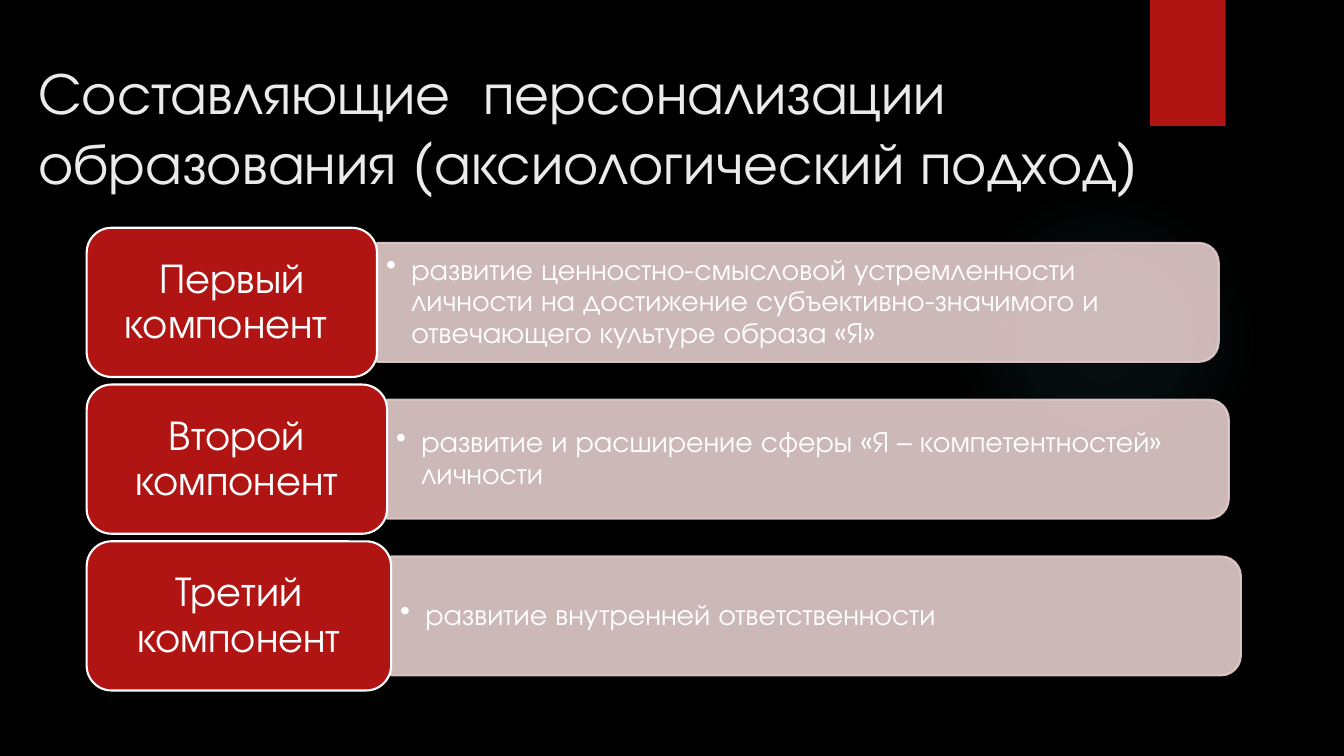
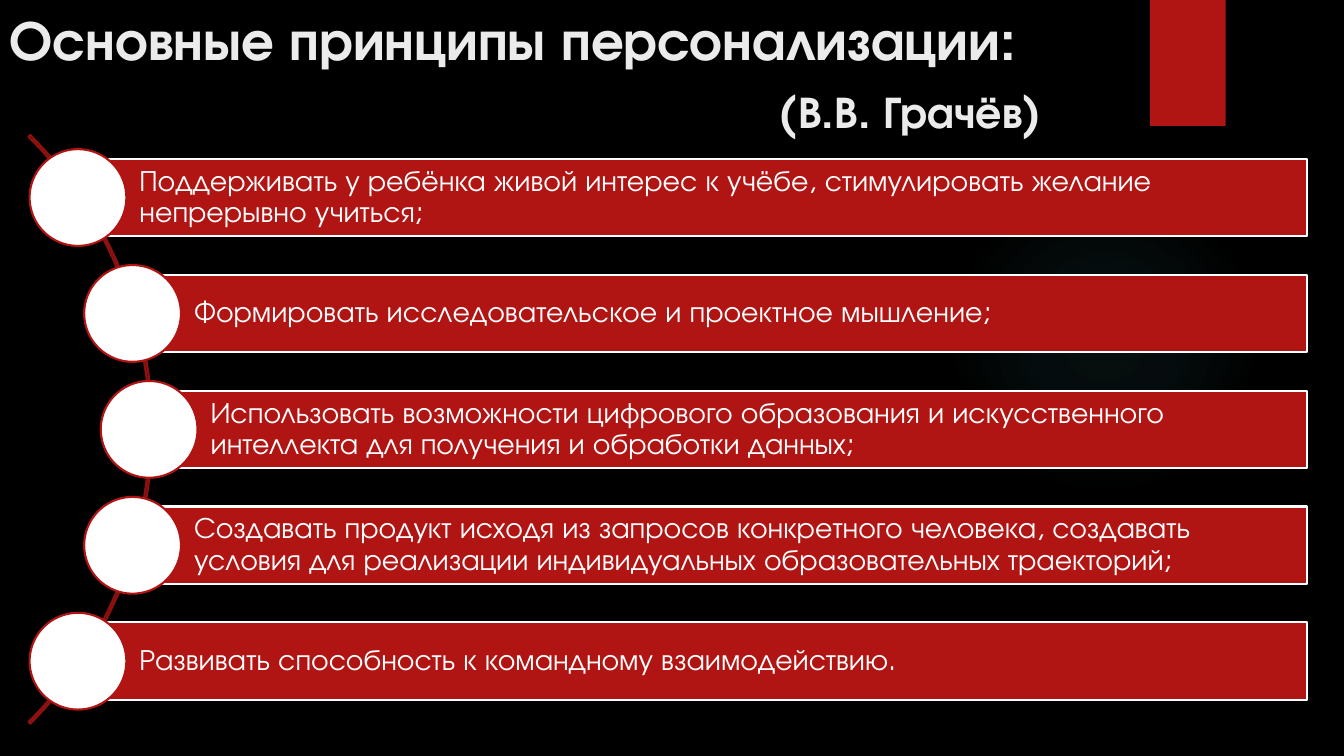
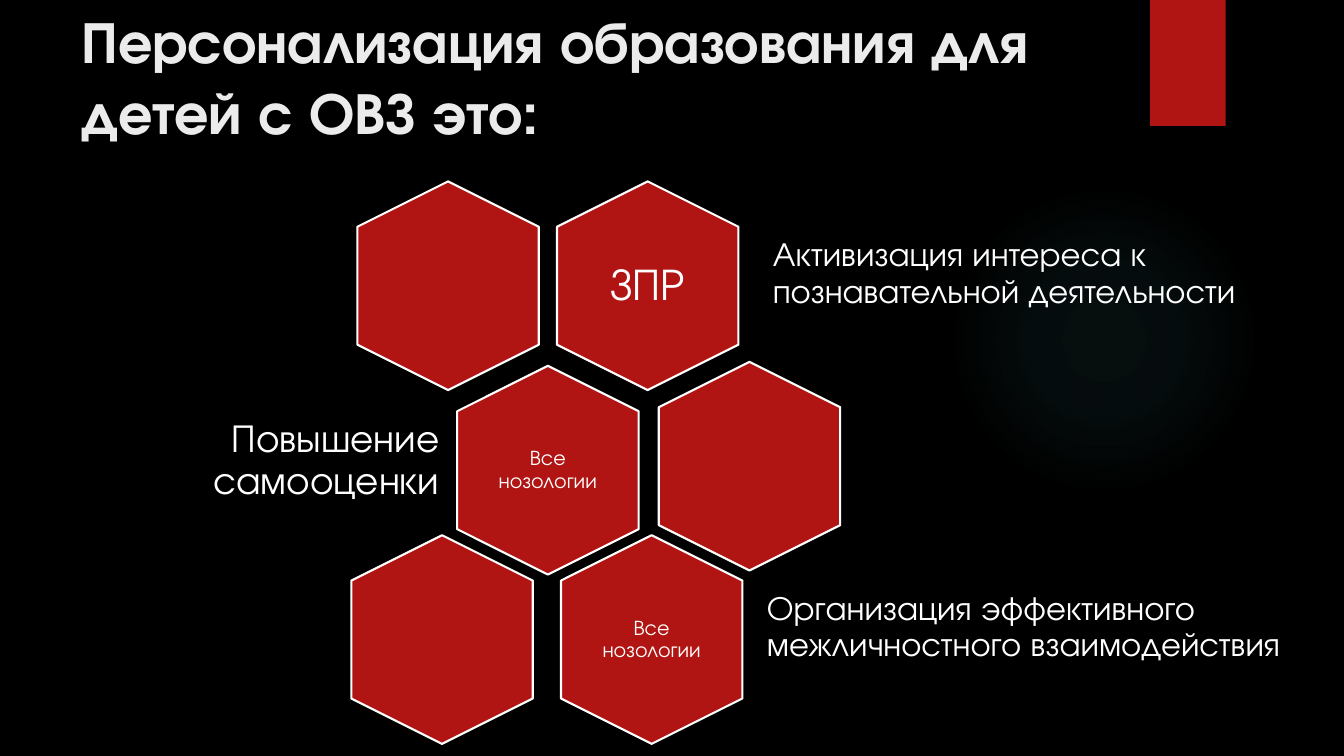
import dataclasses
import math
import typing

import lxml.etree
import pptx
import pptx.dml.color
import pptx.enum.shapes
import pptx.enum.text
import pptx.oxml.ns
import pptx.util

# Lengths are counted in square grid cells, ten to the inch
CELL = pptx.util.Inches(0.1)
COLUMNS, ROWS = 133.33, 75
FONT = "TeX Gyre Adventor"
COLOURS = {
    "back": "000000",
    "red": "B01513",
    "dark red": "8D110F",
    "pink": "E4CCCC",
    "white": "FFFFFF",
    "title": "EBEBEB",
    "glow": "50B9C1",
}
SHAPES = pptx.enum.shapes.MSO_SHAPE
ALIGN = pptx.enum.text.PP_ALIGN
ANCHOR = pptx.enum.text.MSO_ANCHOR
qn = pptx.oxml.ns.qn


@dataclasses.dataclass
class Box:
    left: float
    top: float
    width: float
    height: float

    @classmethod
    def centred(cls, x: float, y: float, width: float, height: float) -> "Box":
        return cls(x - width / 2, y - height / 2, width, height)

    def turned(self) -> "Box":
        """The box whose quarter turn covers this one."""
        return Box.centred(self.left + self.width / 2, self.top + self.height / 2,
                           self.height, self.width)

    def lengths(self) -> list[int]:
        return [cells(n) for n in dataclasses.astuple(self)]


@dataclasses.dataclass
class TextStyle:
    size: float
    insets: tuple[float, float, float, float] = (1, 0.5, 1, 0.5)
    colour: str = "white"
    bold: bool = False
    align: typing.Any = ALIGN.LEFT
    anchor: typing.Any = ANCHOR.MIDDLE
    spacing: float = 0.9


@dataclasses.dataclass
class Component:
    name: str
    text: str
    plaque_width: float
    band_width: float


@dataclasses.dataclass
class Hexagon:
    x: float
    y: float
    text: str = ""
    size: float = 15
    inset: float = 0.6


@dataclasses.dataclass
class Label:
    text: str
    box: Box
    size: float
    inset: float
    align: typing.Any = ALIGN.LEFT


def cells(count: float) -> int:
    return int(count * CELL)


def rgb(name: str) -> pptx.dml.color.RGBColor:
    return pptx.dml.color.RGBColor.from_string(COLOURS[name])


def format_paragraph(para, style: TextStyle) -> None:
    para.alignment = style.align
    para.line_spacing = style.spacing
    for span in para.runs:
        span.font.name = FONT
        span.font.size = pptx.util.Pt(style.size)
        span.font.bold = style.bold
        span.font.color.rgb = rgb(style.colour)


def write(shape, text: str, style: TextStyle):
    frame = shape.text_frame
    frame.word_wrap = True
    frame.vertical_anchor = style.anchor
    (frame.margin_left, frame.margin_top,
     frame.margin_right, frame.margin_bottom) = map(cells, style.insets)
    frame.text = text
    format_paragraph(frame.paragraphs[0], style)
    return frame


def add_text(page, box: Box, text: str, style: TextStyle):
    return write(page.shapes.add_textbox(*box.lengths()), text, style)


def add_figure(page, kind, box: Box, fill: str | None, line: str | None = None,
               turned: bool = False):
    area = box.turned() if turned else box
    shape = page.shapes.add_shape(kind, *area.lengths())
    shape.rotation = 90 if turned else 0
    shape.shadow.inherit = False
    if fill:
        shape.fill.solid()
        shape.fill.fore_color.rgb = rgb(fill)
    else:
        shape.fill.background()
    if line:
        shape.line.color.rgb = rgb(line)
        shape.line.width = pptx.util.Pt(1.5)
    else:
        shape.line.fill.background()
    return shape


def set_opacity(colour, percent: int) -> None:
    lxml.etree.SubElement(colour, qn("a:alpha")).set("val", str(percent * 1000))


def set_indent(para, left: float, first: float, bullet: str = "") -> None:
    properties = para._p.get_or_add_pPr()
    properties.set("marL", str(cells(left)))
    properties.set("indent", str(cells(first)))
    if bullet:
        lxml.etree.SubElement(properties, qn("a:buChar")).set("char", bullet)


def add_glow(page) -> None:
    glow = add_figure(page, SHAPES.OVAL, Box(94.1, 18.3, 30.8, 30.8), None)
    gradient = lxml.etree.Element(qn("a:gradFill"))
    stops = lxml.etree.SubElement(gradient, qn("a:gsLst"))
    for place, opacity in ((0, 7), (36, 6), (69, 0)):
        stop = lxml.etree.SubElement(stops, qn("a:gs"))
        stop.set("pos", str(place * 1000))
        colour = lxml.etree.SubElement(stop, qn("a:srgbClr"))
        colour.set("val", COLOURS["glow"])
        set_opacity(colour, opacity)
    circle = lxml.etree.SubElement(gradient, qn("a:path"))
    circle.set("path", "circle")
    focus = lxml.etree.SubElement(circle, qn("a:fillToRect"))
    for side in "ltrb":
        focus.set(side, "50000")
    properties = glow._element.spPr
    properties.replace(properties.find(qn("a:noFill")), gradient)


def add_page(deck, title: str, box: Box, size: float = 42, bold: bool = True):
    """A page with the shared glow, ribbon and title."""
    page = deck.slides.add_slide(deck.slide_layouts[6])
    add_glow(page)
    add_figure(page, SHAPES.RECTANGLE, Box(114.1, 0, 7.5, 12.5), "red")
    style = TextStyle(size, colour="title", bold=bold, anchor=ANCHOR.TOP, spacing=1.0)
    return page, add_text(page, box, title, style)


# Page 1: three components, each a plaque with a band beside it
COMPONENTS = [
    Component("Первый компонент ",
              "развитие ценностно-смысловой устремленности личности на достижение "
              "субъективно-значимого и отвечающего культуре образа «Я»", 28.8, 83.5),
    Component("Второй компонент",
              "развитие и расширение сферы «Я – компетентностей» личности", 29.8, 83.5),
    Component("Третий компонент", "развитие внутренней ответственности", 30.2, 84.3),
]


def build_components(deck) -> None:
    page, _ = add_page(deck, "Составляющие  персонализации образования (аксиологический подход)",
                       Box(2.8, 5, 121.9, 15.3), bold=False)
    left, first_top, step, plaque_height, band_height = 8.6, 22.6, 15.55, 14.8, 11.8
    plaque_style = TextStyle(30, (1.2, 0.6, 1.2, 0.6), align=ALIGN.CENTER)
    band_style = TextStyle(21, (0.9, 0.4, 0.9, 0.4))
    for row, item in enumerate(COMPONENTS):
        top = first_top + row * step
        band = Box(left + item.plaque_width, top + (plaque_height - band_height) / 2,
                   item.band_width, band_height)
        figure = add_figure(page, SHAPES.ROUND_2_SAME_RECTANGLE, band, "pink", "pink", turned=True)
        for colour in figure._element.spPr.iter(qn("a:srgbClr")):
            set_opacity(colour, 90)
        text_box = Box(band.left, band.top + 0.55, band.width - 0.5, band.height - 1.1)
        frame = add_text(page, text_box, item.text, band_style)
        set_indent(frame.paragraphs[0], 2.5, -2.5, "•")
        plaque = add_figure(page, SHAPES.ROUNDED_RECTANGLE,
                            Box(left, top, item.plaque_width, plaque_height), "red", "white")
        write(plaque, item.name, plaque_style)


# Page 2: five bars whose discs sit on an arc
PRINCIPLES = [
    "Поддерживать у ребёнка живой интерес к учёбе, стимулировать желание непрерывно учиться;",
    "Формировать исследовательское и проектное мышление;",
    "Использовать возможности цифрового образования и искусственного интеллекта "
    "для получения и обработки данных;",
    "Создавать продукт исходя из запросов конкретного человека, создавать условия "
    "для реализации индивидуальных образовательных траекторий;",
    "Развивать способность к командному взаимодействию.",
]


def build_principles(deck) -> None:
    page, frame = add_page(deck, "Основные принципы персонализации:", Box(0, 0, 117.3, 10), 40)
    author = frame.add_paragraph()
    author.text = "(В.В. Грачёв)"
    set_indent(author, 76.3, 0)
    format_paragraph(author, TextStyle(32, colour="title", bold=True, spacing=1.0))
    author.space_before = pptx.util.Pt(8)

    arc_x, arc_y, arc_size, disc_radius = -26.2, 42.6, 82.6, 41
    arc = add_figure(page, SHAPES.BLOCK_ARC, Box.centred(arc_x, arc_y, arc_size, arc_size),
                     None, "dark red")
    # Angles are in units of 100000 / 60000 degrees
    for index, value in enumerate((189, 27, 0.003)):
        arc.adjustments[index] = value

    step, bar_height, disc_size, right = 11.5, 7.7, 9.6, 129.7
    bar_style = TextStyle(21, (6.1, 0.6, 0.6, 0.6))
    for row, text in enumerate(PRINCIPLES):
        drop = (row - len(PRINCIPLES) // 2) * step
        x, y = arc_x + math.sqrt(disc_radius ** 2 - drop ** 2), arc_y + drop
        bar = add_figure(page, SHAPES.RECTANGLE,
                         Box(x, y - bar_height / 2, right - x, bar_height), "red", "white")
        write(bar, text, bar_style)
        add_figure(page, SHAPES.OVAL, Box.centred(x, y, disc_size, disc_size), "white", "red")


# Page 3: a honeycomb with labels at its sides
HEXAGONS = [
    Hexagon(64.25, 28.35, "ЗПР", 32, 1.3),
    Hexagon(44.45, 28.35),
    Hexagon(54.35, 46.65, "Все нозологии"),
    Hexagon(74.35, 46.25),
    Hexagon(64.65, 63.45, "Все нозологии"),
    Hexagon(43.85, 63.45),
]
LABELS = [
    Label("Активизация интереса к познавательной деятельности",
          Box(75.7, 21, 56.4, 12.4), 24, 1),
    Label("Повышение самооценки", Box(9.3, 39.5, 35.5, 12.4), 28, 1.2, ALIGN.RIGHT),
    Label("Организация эффективного межличностного взаимодействия",
          Box(75.1, 56.1, 56.8, 12.4), 24, 1),
]


def build_honeycomb(deck) -> None:
    page, _ = add_page(deck, "Персонализация образования для детей с ОВЗ это:",
                       Box(7.1, 0, 102.9, 15.3))
    for item in HEXAGONS:
        add_figure(page, SHAPES.HEXAGON, Box.centred(item.x, item.y, 18, 20.7),
                   "red", "white", turned=True)
        if item.text:
            add_text(page, Box.centred(item.x, item.y, 12.4, 14.2), item.text,
                     TextStyle(item.size, (item.inset,) * 4, align=ALIGN.CENTER))
    for label in LABELS:
        add_text(page, label.box, label.text,
                 TextStyle(label.size, (label.inset,) * 4, align=label.align))


def main() -> None:
    deck = pptx.Presentation()
    deck.slide_width, deck.slide_height = cells(COLUMNS), cells(ROWS)
    background = deck.slide_master.background.fill
    background.solid()
    background.fore_color.rgb = rgb("back")
    build_components(deck)
    build_principles(deck)
    build_honeycomb(deck)
    deck.save("out.pptx")


if __name__ == "__main__":
    main()
